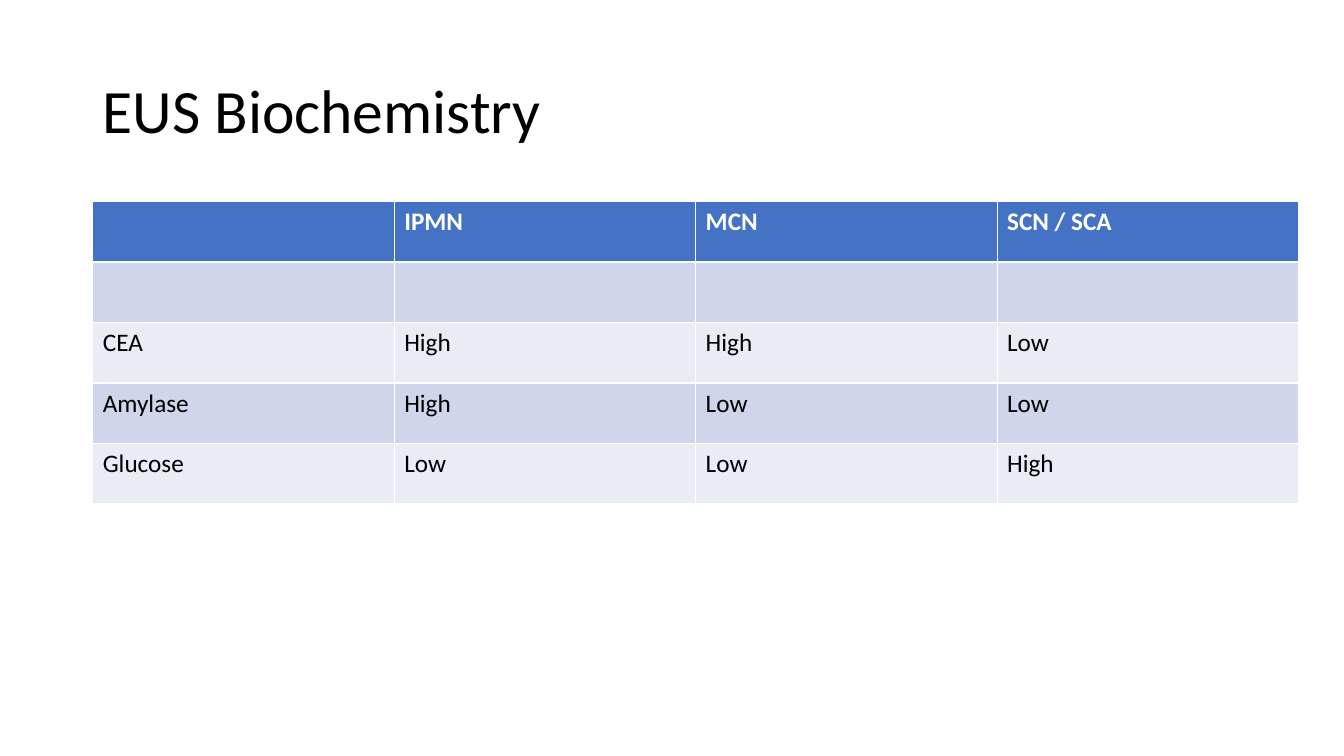
"""Build the EUS biochemistry slide with its title and table."""
import pptx
import pptx.dml.color
import pptx.enum.text
import pptx.util

WIDE, HIGH = 13.33, 7.5
LEFT, TOP = 0.92, 2
COL, ROW = 2.99, 0.6
HEAD = "4472C4"
BANDS = ["E9EBF5", "CFD5EA"]
DATA = [
    ["", "IPMN", "MCN", "SCN / SCA"],
    ["", "", "", ""],
    ["CEA", "High", "High", "Low"],
    ["Amylase", "High", "Low", "Low"],
    ["Glucose", "Low", "Low", "High"],
]


def tint(code):
    return pptx.dml.color.RGBColor.from_string(code)


def style(para, size, code, bold=False):
    for run in para.runs:
        run.font.name = "Calibri"
        run.font.size = pptx.util.Pt(size)
        run.font.bold = bold
        run.font.color.rgb = tint(code)


inch = pptx.util.Inches
deck = pptx.Presentation()
deck.slide_width, deck.slide_height = inch(WIDE), inch(HIGH)
slide = deck.slides.add_slide(deck.slide_layouts[5])

title = slide.shapes.title
title.left, title.top = inch(LEFT), inch(0.4)
title.width, title.height = inch(WIDE - 2 * LEFT), inch(1.45)
frame = title.text_frame
frame.text = "EUS Biochemistry"
frame.word_wrap = True
frame.auto_size = pptx.enum.text.MSO_AUTO_SIZE.NONE
frame.vertical_anchor = pptx.enum.text.MSO_ANCHOR.MIDDLE
para = frame.paragraphs[0]
para.alignment = pptx.enum.text.PP_ALIGN.LEFT
para.line_spacing = 0.9
style(para, 44, "000000")

rows, cols = len(DATA), len(DATA[0])
table = slide.shapes.add_table(
    rows, cols, inch(LEFT), inch(TOP), inch(cols * COL), inch(rows * ROW)
).table
for r, line in enumerate(DATA):
    top = r == 0
    for c, word in enumerate(line):
        cell = table.cell(r, c)
        cell.fill.solid()
        cell.fill.fore_color.rgb = tint(HEAD if top else BANDS[r % 2])
        cell.text_frame.text = word
        style(cell.text_frame.paragraphs[0], 18, "FFFFFF" if top else "000000", top)

deck.save("out.pptx")
